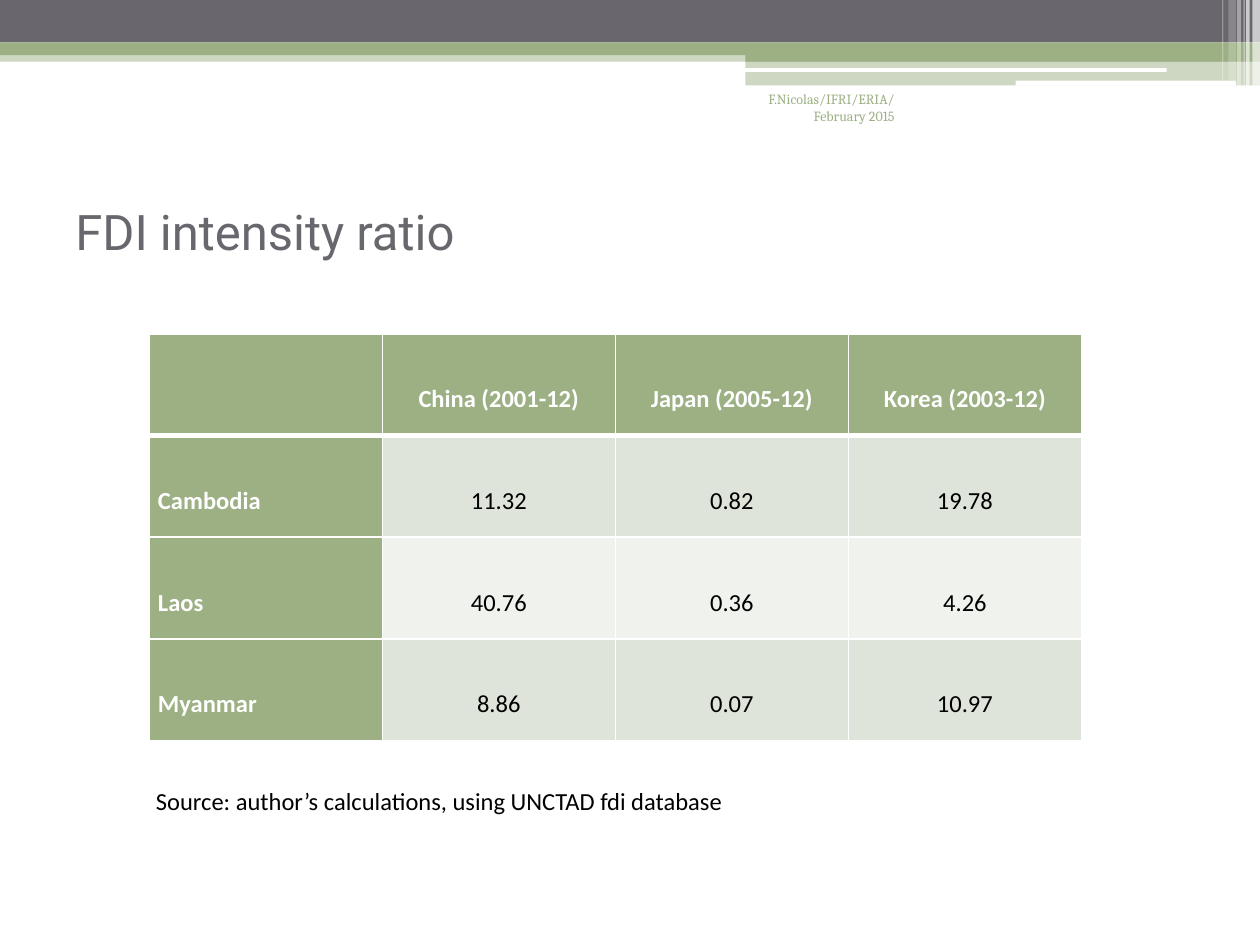
from lxml import etree
from pptx import Presentation
from pptx.dml.color import RGBColor
from pptx.enum.shapes import MSO_SHAPE
from pptx.enum.text import MSO_ANCHOR, PP_ALIGN
from pptx.oxml.ns import qn
from pptx.util import Pt

RECT, ROUND = MSO_SHAPE.RECTANGLE, MSO_SHAPE.ROUNDED_RECTANGLE
LEFT, CENTER, RIGHT = PP_ALIGN.LEFT, PP_ALIGN.CENTER, PP_ALIGN.RIGHT
TOP, MIDDLE = MSO_ANCHOR.TOP, MSO_ANCHOR.MIDDLE

COLORS = {
    "gray": "69676D",
    "green": "9CB084",
    "band": "DEE4D9",
    "pale": "EFF2ED",
    "white": "FFFFFF",
    "black": "000000",
}

ROWS = [
    ["", "China (2001-12)", "Japan (2005-12)", "Korea (2003-12)"],
    ["Cambodia", "11.32", "0.82", "19.78"],
    ["Laos", "40.76", "0.36", "4.26"],
    ["Myanmar", "8.86", "0.07", "10.97"],
]

BANDS = [
    (0, 28.8, 720, 6.5, "green", 50),
    (0, 0, 720, 24.3, "gray", 100),
    (0, 24.3, 720, 7.3, "green", 100),
    (426, 28, 294, 7.3, "green", 100),
    (426, 34.8, 294, 14, "green", 50),
]
PILLS = [(425.5, 38.9, 241.2, 2.2), (580.3, 46.1, 126, 2.9)]
STRIPES = [
    (715.7, 4.3, 49, 65),
    (712.1, 2.1, 49, 65),
    (710.6, 0.7, 49, 60),
    (707, 2.1, 49, 40),
    (702, 4.3, 46, 20),
    (698.4, 0.7, 46, 30),
]


class Deck:
    def __init__(self):
        self.prs = Presentation()
        self.prs.slide_width, self.prs.slide_height = Pt(720), Pt(540)
        self.slide = self.prs.slides.add_slide(self.prs.slide_layouts[6])

    def color(self, name):
        return RGBColor.from_string(COLORS[name])

    def bar(self, x, y, w, h, color, alpha=100, kind=RECT):
        sp = self.slide.shapes.add_shape(kind, Pt(x), Pt(y), Pt(w), Pt(h))
        sp.shadow.inherit = False
        sp.line.fill.background()
        sp.fill.solid()
        sp.fill.fore_color.rgb = self.color(color)
        if alpha < 100:
            clr = sp._element.spPr.find(".//" + qn("a:srgbClr"))
            etree.SubElement(clr, qn("a:alpha"), val=str(alpha * 1000))

    def paragraph(self, p, text, font, size, color, bold=False, align=LEFT):
        p.text, p.alignment = text, align
        p.font.name, p.font.size, p.font.bold = font, Pt(size), bold
        p.font.color.rgb = self.color(color)

    def text(self, x, y, w, h, text, font, size, color, align=LEFT, anchor=TOP):
        tf = self.slide.shapes.add_textbox(Pt(x), Pt(y), Pt(w), Pt(h)).text_frame
        tf.word_wrap, tf.vertical_anchor = True, anchor
        self.paragraph(tf.paragraphs[0], text, font, size, color, align=align)

    def border(self, cell, side, width):
        ln = etree.SubElement(cell._tc.get_or_add_tcPr(), qn("a:" + side), w=str(Pt(width)))
        fill = etree.SubElement(ln, qn("a:solidFill"))
        etree.SubElement(fill, qn("a:srgbClr"), val=COLORS["white"])

    def cell(self, cell, text, r, c):
        head = r == 0 or c == 0
        for side in ("lnL", "lnR", "lnT", "lnB"):
            thick = (r, side) in ((0, "lnB"), (1, "lnT"))
            self.border(cell, side, 3 if thick else 1)
        cell.fill.solid()
        fill = "green" if head else "band" if r % 2 else "pale"
        cell.fill.fore_color.rgb = self.color(fill)
        cell.margin_left = cell.margin_right = Pt(5)
        cell.margin_top, cell.margin_bottom = Pt(29), Pt(0)
        self.paragraph(cell.text_frame.paragraphs[0], text, "Calibri", 14,
                       "white" if head else "black", head, CENTER if c else LEFT)

    def table(self, x, y, col_w, row_h, rows):
        n, m = len(rows), len(rows[0])
        table = self.slide.shapes.add_table(
            n, m, Pt(x), Pt(y), Pt(col_w * m), Pt(row_h * n)).table
        for r, row in enumerate(rows):
            for c, text in enumerate(row):
                self.cell(table.cell(r, c), text, r, c)


def main():
    s = Deck()
    for band in BANDS:
        s.bar(*band)
    for pill in PILLS:
        s.bar(*pill, "white", kind=ROUND)
    for x, w, h, alpha in STRIPES:
        s.bar(x, 0, w, h, "white", alpha)
    s.text(36, 90, 648, 84, "FDI intensity ratio", "Roboto", 28, "gray", anchor=MIDDLE)
    s.text(414, 48.3, 104.4, 36, "F.Nicolas/IFRI/ERIA/ February 2015",
           "Cambria", 8, "green", RIGHT)
    s.table(85.3, 190.8, 133.2, 58.1, ROWS)
    s.text(82, 445.7, 538.5, 24.5,
           "Source: author’s calculations, using UNCTAD fdi database",
           "Calibri", 14, "black")
    s.prs.save("out.pptx")


if __name__ == "__main__":
    main()
